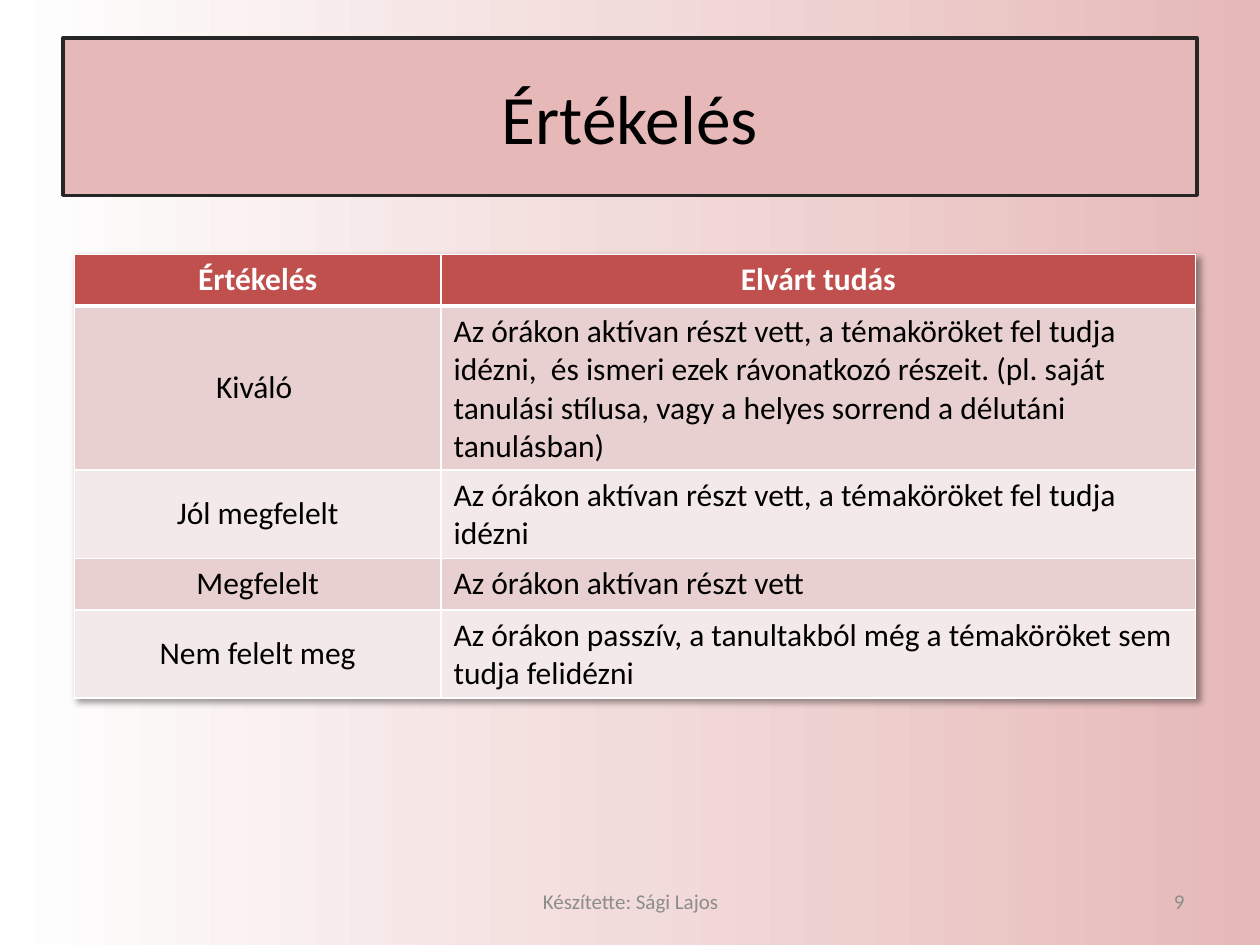
from copy import deepcopy

from lxml import etree
from pptx import Presentation, util as u
from pptx.dml import color
from pptx.enum import shapes, text
from pptx.oxml import ns

WIDTH, HEIGHT = 10, 7.5
FONT = "Calibri"
LEFT, CENTER, RIGHT = text.PP_ALIGN.LEFT, text.PP_ALIGN.CENTER, text.PP_ALIGN.RIGHT
LEVELS = [
    ("Értékelés", "Elvárt tudás"),
    ("Kiváló ", "Az órákon aktívan részt vett, a témaköröket fel tudja idézni,  és ismeri ezek "
     "rávonatkozó részeit. (pl. saját tanulási stílusa, vagy a helyes sorrend a délutáni tanulásban)"),
    ("Jól megfelelt", "Az órákon aktívan részt vett, a témaköröket fel tudja idézni"),
    ("Megfelelt", "Az órákon aktívan részt vett"),
    ("Nem felelt meg", "Az órákon passzív, a tanultakból még a témaköröket sem tudja felidézni"),
]


def rgb(value):
    """Turn a hex string into a colour."""
    return color.RGBColor.from_string(value)


def inches(box):
    """Turn a box in inches into lengths."""
    return [u.Inches(value) for value in box]


def add_element(parent, tag, **attributes):
    """Append a DrawingML element with its attributes."""
    return etree.SubElement(parent, ns.qn(tag), {key: str(value) for key, value in attributes.items()})


def write(frame, content, size, hue, align, bold=False):
    """Write one run into the first paragraph of a text frame."""
    frame.word_wrap = True
    paragraph = frame.paragraphs[0]
    paragraph.alignment = align
    run = paragraph.add_run()
    run.text = content
    run.font.name, run.font.size, run.font.bold = FONT, u.Pt(size), bold
    run.font.color.rgb = rgb(hue)


def paint_background(slide, hues):
    """Fill the background with an even gradient from left to right."""
    fill = slide.background.fill
    fill.gradient()
    fill.gradient_angle = 0
    first = fill.gradient_stops[0]._gs
    first.addnext(deepcopy(first))
    for index, hue in enumerate(hues):
        stop = fill.gradient_stops[index]
        stop.position = index / (len(hues) - 1)
        stop.color.rgb = rgb(hue)


def add_title(slide, box, content):
    """Place the outlined title banner."""
    banner = slide.shapes.add_shape(shapes.MSO_SHAPE.HORIZONTAL_SCROLL, *inches(box))
    banner.adjustments[0] = 0
    banner.shadow.inherit = False
    banner.fill.solid()
    banner.fill.fore_color.rgb = rgb("E6B9B8")
    banner.line.color.rgb = rgb("262626")
    banner.line.width = u.Pt(2)
    banner.text_frame.vertical_anchor = text.MSO_ANCHOR.MIDDLE
    write(banner.text_frame, content, 39.6, "000000", CENTER)


def add_footer(slide, box, content, align):
    """Place one grey footer text."""
    frame = slide.shapes.add_textbox(*inches(box)).text_frame
    frame.vertical_anchor = text.MSO_ANCHOR.MIDDLE
    write(frame, content, 12, "8C8C8C", align)


def border_cell(cell, bottom):
    """Draw white cell borders, with a given bottom width."""
    properties = cell._tc.get_or_add_tcPr()
    for position, (side, width) in enumerate(zip("LRTB", (1, 1, 1, bottom))):
        line = etree.Element(ns.qn(f"a:ln{side}"), w=str(u.Pt(width)))
        add_element(add_element(line, "a:solidFill"), "a:srgbClr", val="FFFFFF")
        properties.insert(position, line)


def shade_table(table):
    """Give the table a soft shadow to the lower right."""
    effects = etree.Element(ns.qn("a:effectLst"))
    shadow = add_element(effects, "a:outerShdw", blurRad=u.Pt(4), dist=u.Pt(3), dir=2700000,
                         algn="tl", rotWithShape=0)
    add_element(add_element(shadow, "a:srgbClr", val="000000"), "a:alpha", val=40000)
    table._tbl.tblPr.insert(0, effects)


def add_levels(slide, box, shares, rows):
    """Place the table of grades and expected knowledge."""
    table = slide.shapes.add_table(len(rows), len(shares), *inches(box)).table
    shade_table(table)
    for column, share in zip(table.columns, shares):
        column.width = u.Inches(box[2] * share)
    for y, row in enumerate(rows):
        header = y == 0
        for x, content in enumerate(row):
            cell = table.cell(y, x)
            cell.fill.solid()
            cell.fill.fore_color.rgb = rgb("C0504D" if header else ("F4E9E9", "E8D0D0")[y % 2])
            border_cell(cell, 3 if header else 1)
            if x == 0 and not header:
                cell.vertical_anchor = text.MSO_ANCHOR.MIDDLE
            write(cell.text_frame, content, 18, "FFFFFF" if header else "000000",
                  CENTER if header or x == 0 else LEFT, header)


def main():
    """Build and save the slide."""
    presentation = Presentation()
    presentation.slide_width, presentation.slide_height = inches((WIDTH, HEIGHT))
    slide = presentation.slides.add_slide(presentation.slide_layouts[6])
    margin = WIDTH * 0.05
    paint_background(slide, ("FFFFFF", "F2DCDB", "E6B9B8"))
    add_title(slide, (margin, 0.3, WIDTH - 2 * margin, HEIGHT / 6), "Értékelés")
    add_footer(slide, (3.42, 6.95, 3.17, 0.4), "Készítette: Sági Lajos", CENTER)
    add_footer(slide, (7.17, 6.95, 2.33, 0.4), "9", RIGHT)
    add_levels(slide, (0.59, 2.02, 8.9, 2.05), (0.327, 0.673), LEVELS)
    presentation.save("out.pptx")


if __name__ == "__main__":
    main()
